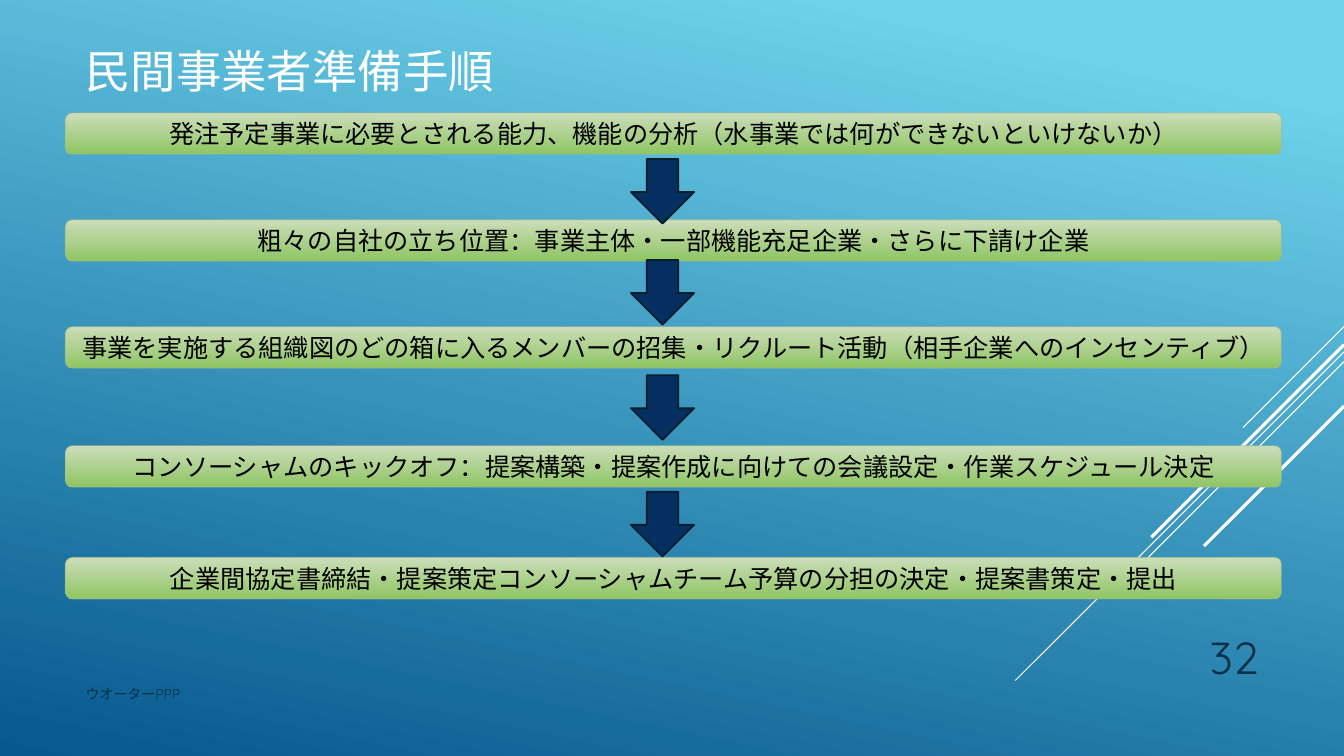
import pptx
import pptx.dml.color
import pptx.enum.dml
import pptx.enum.shapes
import pptx.enum.text
import pptx.oxml
import pptx.oxml.ns
import pptx.util
from lxml import etree

RGB = pptx.dml.color.RGBColor
WHITE = RGB(0xFF, 0xFF, 0xFF)
BLACK = RGB(0x00, 0x00, 0x00)
SKY = RGB(0x6E, 0xD2, 0xEB)
DEEP_BLUE = RGB(0x06, 0x58, 0x8E)
FOOTER_NAVY = RGB(0x0A, 0x30, 0x4A)
PALE_GREEN = RGB(0xCC, 0xDD, 0xBA)
GREEN = RGB(0x8F, 0xC5, 0x63)
BAR_EDGE = RGB(0xA4, 0xBB, 0x8B)
ARROW_NAVY = RGB(0x05, 0x2F, 0x61)
ARROW_EDGE = RGB(0x02, 0x1E, 0x2B)

FONT = "Quicksand"
ALIGN = pptx.enum.text.PP_ALIGN
ANCHOR = pptx.enum.text.MSO_ANCHOR
SHAPE = pptx.enum.shapes.MSO_SHAPE

# Regions: left, top, width, height in inches
SLIDE_SIZE = (13.33, 7.5)
TITLE_BOX = (0.75, 0.35, 9.33, 0.69)
FOOTER_BOX = (0.75, 6.75, 8.25, 0.4)
NUMBER_BOX = (11.33, 6.1, 1.25, 0.73)
STEPS_BOX = (0.65, 1.12, 12.06, 4.82)
RAYS_BOX = (10.07, 3.24, 3.26, 3.51)

# Steps: text and top of each bar, in percent of the region's height
STEPS = [
    ("発注予定事業に必要とされる能力、機能の分析（水事業では何ができないといけないか）", 0),
    ("粗々の自社の立ち位置：事業主体・一部機能充足企業・さらに下請け企業", 22),
    ("事業を実施する組織図のどの箱に入るメンバーの招集・リクルート活動（相手企業へのインセンティブ）", 44),
    ("コンソーシャムのキックオフ：提案構築・提案作成に向けての会議設定・作業スケジュール決定", 68.5),
    ("企業間協定書締結・提案策定コンソーシャムチーム予算の分担の決定・提案書策定・提出", 91.5),
]
ARROW_TOPS = [9.5, 30.3, 54, 78]
BAR_HEIGHT = 8.5
ARROW_LEFT, ARROW_WIDTH, ARROW_HEIGHT = 46.5, 5.2, 13.3

# Diagonal rays: start and length in percent of the region's width, weight in points
RAYS = [(0, 30.7, 0.75), (7.7, 100, 0.75), (10.7, 63.5, 0.75), (5.5, 58.6, 2.25), (24.2, 42.6, 2.25)]


def inches(values):
    return [pptx.util.Inches(value) for value in values]


def part_of(box, left, top, width, height):
    """Return the box found at the given percentages of another box."""
    box_left, box_top, box_width, box_height = box
    return (box_left + box_width * left / 100, box_top + box_height * top / 100,
            box_width * width / 100, box_height * height / 100)


def set_all(target, values):
    for name, value in values.items():
        setattr(target, name, value)


def fill_gradient(fill, angle, stops):
    fill.gradient()
    fill.gradient_angle = angle
    for stop, (position, color) in zip(fill.gradient_stops, stops):
        stop.position = position
        stop.color.rgb = color


def write_text(shape, text, size, color, align, anchor):
    frame = shape.text_frame
    set_all(frame, {"word_wrap": True, "vertical_anchor": anchor})
    paragraph = frame.paragraphs[0]
    paragraph.alignment = align
    run = paragraph.add_run()
    run.text = text
    set_all(run.font, {"name": FONT, "size": pptx.util.Pt(size)})
    run.font.color.rgb = color


def add_label(slide, box, text, size, color, align=ALIGN.LEFT, anchor=ANCHOR.TOP):
    label = slide.shapes.add_textbox(*inches(box))
    write_text(label, text, size, color, align, anchor)


def add_outlined_shape(slide, kind, box, edge, weight):
    shape = slide.shapes.add_shape(kind, *inches(box))
    shape.shadow.inherit = False
    shape.line.color.rgb = edge
    shape.line.width = pptx.util.Pt(weight)
    return shape


def add_rays(slide, box):
    left, top, width, _ = box
    right = left + width
    for start, length, weight in RAYS:
        begin = top + width * start / 100
        run = width * length / 100
        ray = slide.shapes.add_connector(
            pptx.enum.shapes.MSO_CONNECTOR.STRAIGHT,
            *inches((right, begin, right - run, begin + run)))
        ray.line.color.rgb = WHITE
        ray.line.width = pptx.util.Pt(weight)
        etree.SubElement(ray._element.spPr, pptx.oxml.ns.qn("a:effectLst"))


def add_bar(slide, box, text):
    bar = add_outlined_shape(slide, SHAPE.ROUNDED_RECTANGLE, box, BAR_EDGE, 0.75)
    fill_gradient(bar.fill, 270, [(0, PALE_GREEN), (1, GREEN)])
    # Edge at 60 % opacity
    edge = bar._element.spPr.xpath("./a:ln//a:srgbClr")[0]
    etree.SubElement(edge, pptx.oxml.ns.qn("a:alpha")).set("val", "60000")
    write_text(bar, text, 18, BLACK, ALIGN.CENTER, ANCHOR.MIDDLE)


def add_steps(slide, box):
    for text, top in STEPS:
        add_bar(slide, part_of(box, 0, top, 100, BAR_HEIGHT), text)
    for top in ARROW_TOPS:
        arrow_box = part_of(box, ARROW_LEFT, top, ARROW_WIDTH, ARROW_HEIGHT)
        arrow = add_outlined_shape(slide, SHAPE.DOWN_ARROW, arrow_box, ARROW_EDGE, 1.25)
        arrow.fill.solid()
        arrow.fill.fore_color.rgb = ARROW_NAVY


def main():
    presentation = pptx.Presentation()
    presentation.slide_width, presentation.slide_height = inches(SLIDE_SIZE)
    slide = presentation.slides.add_slide(presentation.slide_layouts[6])

    # Background
    fill_gradient(slide.background.fill, 258, [(0.1, SKY), (1, DEEP_BLUE)])
    add_rays(slide, RAYS_BOX)

    # Title, footer and slide number
    add_label(slide, TITLE_BOX, "民間事業者準備手順", 32.4, WHITE, anchor=ANCHOR.MIDDLE)
    add_label(slide, FOOTER_BOX, "ウオーターPPP", 10, FOOTER_NAVY)
    add_label(slide, NUMBER_BOX, "32", 32, FOOTER_NAVY, ALIGN.RIGHT, ANCHOR.BOTTOM)

    # Procedure
    add_steps(slide, STEPS_BOX)
    presentation.save("out.pptx")


if __name__ == "__main__":
    main()
